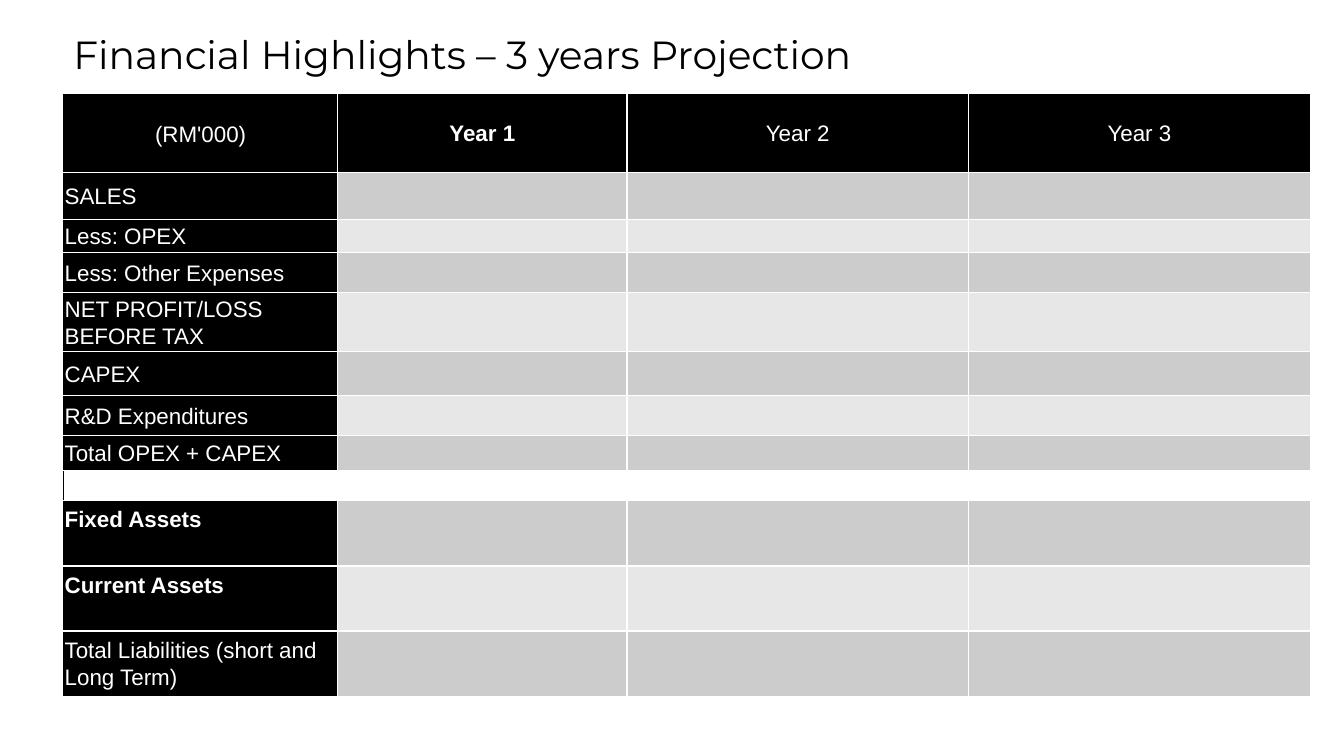
from lxml.etree import SubElement as Sub
from pptx import Presentation
from pptx.dml.color import RGBColor
from pptx.enum.text import MSO_ANCHOR as Anchor, PP_ALIGN as Align
from pptx.oxml.ns import qn
from pptx.util import Cm, Pt

BLACK, WHITE = "000000", "FFFFFF"
BANDS = "CCCCCC", "E7E7E7"
HEADS = "(RM'000)", "Year 1", "Year 2", "Year 3"
WIDTHS = 6.91, 7.29, 8.61, 8.61
ROWS = (
    ("SALES", 1.18),
    ("Less: OPEX", 0.84),
    ("Less: Other Expenses", 1.01),
    ("NET PROFIT/LOSS BEFORE TAX", 1.48),
    ("CAPEX", 1.11),
    ("R&D Expenditures", 1),
    ("Total OPEX + CAPEX", 0.89),
    ("", 0.74),
    ("Fixed Assets", 1.64),
    ("Current Assets", 1.64),
    ("Total Liabilities (short and Long Term)", 1.64),
)
BOLD = "Year 1", "Fixed Assets", "Current Assets"
HIGH = "Fixed Assets", "Current Assets"


def color(code):
    """Turn a hex string into a colour."""
    return RGBColor.from_string(code)


def write(frame, text, size=16, face="Arial", ink=WHITE, bold=False,
          align=Align.LEFT, lead=None, before=0, after=0):
    """Put one formatted paragraph into a text frame."""
    frame.word_wrap = True
    para = frame.paragraphs[0]
    para.alignment = align
    para.space_before, para.space_after = Pt(before), Pt(after)
    if lead:
        para.line_spacing = lead
    run = para.add_run()
    run.text = text
    font = run.font
    font.size, font.name, font.bold = Pt(size), face, bold
    font.color.rgb = color(ink)


def paint(cell, fill, left=WHITE, top=WHITE):
    """Give a cell its margins, borders and fill."""
    cell.margin_left = cell.margin_right = Cm(0.03)
    cell.margin_top = cell.margin_bottom = 0
    cell.vertical_anchor = Anchor.MIDDLE
    props = cell._tc.get_or_add_tcPr()
    for side, ink in zip("LRTB", (left, WHITE, top, WHITE)):
        line = Sub(props, qn(f"a:ln{side}"), w=str(Pt(1)))
        solid = Sub(line, qn("a:solidFill"))
        Sub(solid, qn("a:srgbClr"), val=ink)
    cell.fill.solid()
    cell.fill.fore_color.rgb = color(fill)


def title(slide, x, y, w, h):
    """Place the slide heading in its box."""
    box = slide.shapes.add_textbox(Cm(x), Cm(y), Cm(w), Cm(h))
    write(box.text_frame, "Financial Highlights – 3 years Projection",
          size=28, face="Montserrat", ink=BLACK)


def header(table):
    """Fill the row of column headings."""
    for col, text in enumerate(HEADS):
        cell = table.cell(0, col)
        paint(cell, BLACK, left=WHITE if col else BLACK, top=BLACK)
        look = {} if col else {"lead": 1.07, "before": 6, "after": 3}
        write(cell.text_frame, text, bold=text in BOLD,
              align=Align.CENTER, **look)


def label(cell, text):
    """Fill the first cell of a row."""
    paint(cell, BLACK if text else WHITE, left=BLACK)
    if text:
        write(cell.text_frame, text, bold=text in BOLD, lead=1.07)
    if text in HIGH:
        cell.vertical_anchor = Anchor.TOP
        cell.margin_top = Cm(0.13)


def grid(slide, x, y, w, h):
    """Place the projection table in its box."""
    table = slide.shapes.add_table(len(ROWS) + 1, len(HEADS),
                                   Cm(x), Cm(y), Cm(w), Cm(h)).table
    for col, width in zip(table.columns, WIDTHS):
        col.width = Cm(width)
    table.rows[0].height = Cm(h - sum(high for _, high in ROWS))
    header(table)
    for row, (text, high) in enumerate(ROWS, 1):
        table.rows[row].height = Cm(high)
        label(table.cell(row, 0), text)
        for col in range(1, len(HEADS)):
            paint(table.cell(row, col), BANDS[(row + 1) % 2] if text else WHITE)
        if not text:
            table.cell(row, 0).merge(table.cell(row, len(HEADS) - 1))


def main():
    """Build the slide and save it."""
    deck = Presentation()
    deck.slide_width, deck.slide_height = Cm(33.87), Cm(19.05)
    slide = deck.slides.add_slide(deck.slide_layouts[6])
    title(slide, 1.6, 0.64, 25.93, 1.45)
    grid(slide, 1.6, 2.38, sum(WIDTHS), 15.14)
    deck.save("out.pptx")


if __name__ == "__main__":
    main()
